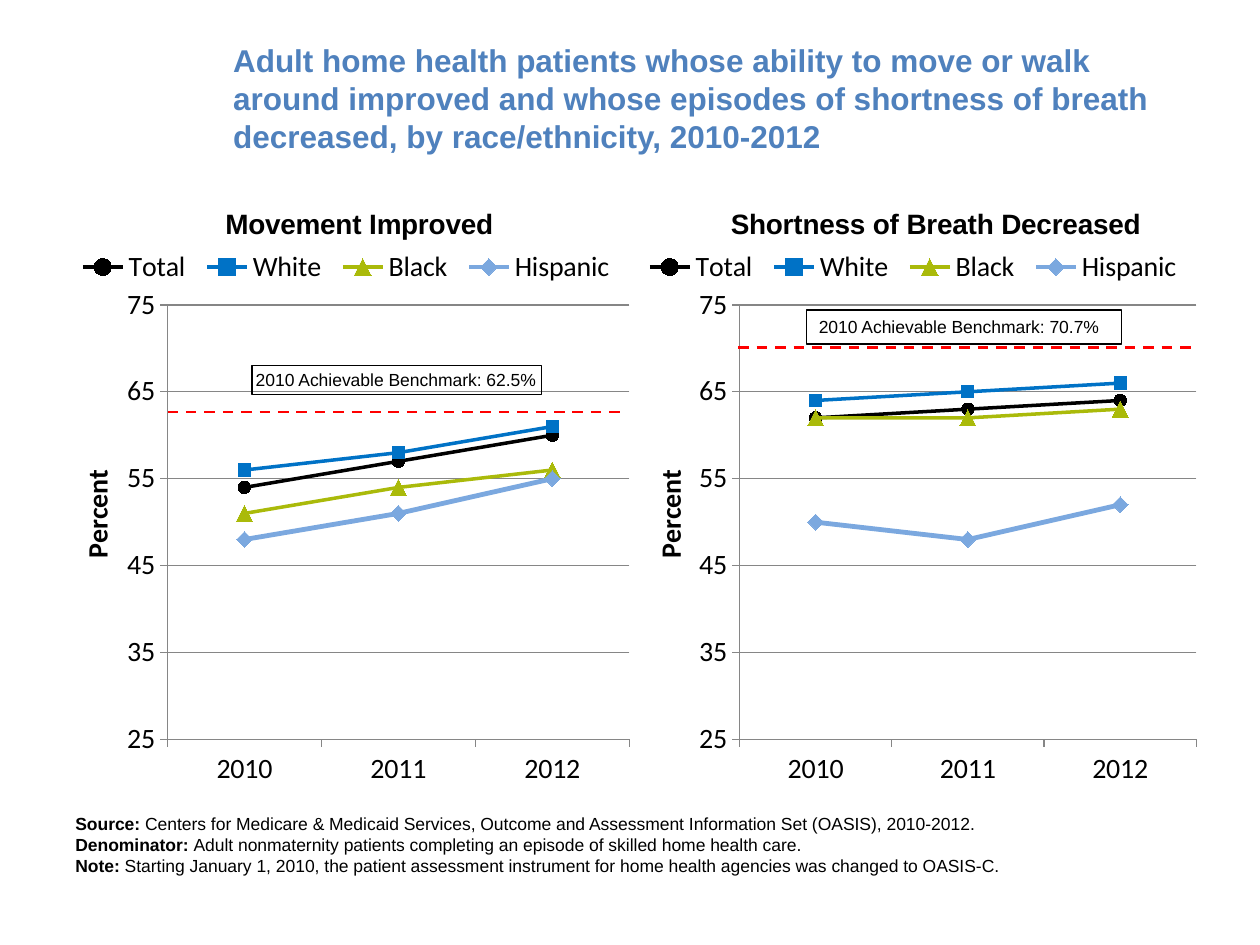
from lxml import etree
from pptx import Presentation
from pptx.chart import data as cd
from pptx.dml.color import RGBColor
from pptx.enum import chart as ch, dml, shapes, text
from pptx.oxml import ns, parse_xml
from pptx.util import Inches, Pt

BLACK = RGBColor(0x00, 0x00, 0x00)
TITLE_BLUE = RGBColor(0x4F, 0x81, 0xBD)
BLUE = RGBColor(0x00, 0x72, 0xC6)
GREEN = RGBColor(0xAA, 0xBA, 0x0A)
LIGHT_BLUE = RGBColor(0x7B, 0xA8, 0xDF)
RED = RGBColor(0xFF, 0x00, 0x00)
GRAY = RGBColor(0x86, 0x86, 0x86)

HEADING = ("Adult home health patients whose ability to move or walk around improved "
           "and whose episodes of shortness of breath decreased, by race/ethnicity, 2010-2012")
YEARS = ["2010", "2011", "2012"]
MARKER = ch.XL_MARKER_STYLE
GROUPS = [
    ("Total", BLACK, 2, MARKER.CIRCLE, 7),
    ("White", BLUE, 2, MARKER.SQUARE, 7),
    ("Black", GREEN, 2, MARKER.TRIANGLE, 9),
    ("Hispanic", LIGHT_BLUE, 2.75, MARKER.DIAMOND, 9),
]
PANELS = [
    {
        "title": "Shortness of Breath Decreased", "left": 5,
        "title_at": (0.76, 0), "percent_at": (0.13, 2.09), "plot_at": (0.87, 0.82, 3.63, 3.45),
        "percents": [(62, 63, 64), (64, 65, 66), (62, 62, 63), (50, 48, 52)],
        "benchmark": "2010 Achievable Benchmark: 70.7%",
        "label_at": (6.4, 2.46, 2.5, 0.27), "insets": (0.1, 0.05), "rule": (5.86, 2.76),
    },
    {
        "title": "Movement Improved", "left": 0.5,
        "title_at": (1.25, 0), "percent_at": (0.08, 2.09), "plot_at": (0.83, 0.82, 3.67, 3.45),
        "percents": [(54, 57, 60), (56, 58, 61), (51, 54, 56), (48, 51, 55)],
        "benchmark": "2010 Achievable Benchmark: 62.5%",
        "label_at": (2, 2.9, 2.3, 0.23), "insets": (0.03, 0.03), "rule": (1.33, 3.27),
    },
]
CHART_TOP, CHART_WIDTH, CHART_HEIGHT = 1.6, 4.5, 4.7
LEGEND_AT = (0.06, 0.36, 4.38, 0.32)
RULE_LENGTH = 3.6
NOTES = [
    ("Source: ", "Centers for Medicare & Medicaid Services, Outcome and Assessment "
                 "Information Set (OASIS), 2010-2012."),
    ("Denominator: ", "Adult nonmaternity patients completing an episode of skilled home health care."),
    ("Note: ", "Starting January 1, 2010, the patient assessment instrument for home health "
               "agencies was changed to OASIS-C."),
]


def style(font, size, name="Arial", color=BLACK, bold=False):
    font.size, font.name, font.bold = Pt(size), name, bold
    font.color.rgb = color


def place(element, position, index=1, inner=False):
    for old in element.findall(ns.qn("c:layout")):
        element.remove(old)
    target = '<c:layoutTarget val="inner"/>' if inner else ""
    modes = "".join(f'<c:{side}Mode val="edge"/>' for side in "xy")
    extents = (CHART_WIDTH, CHART_HEIGHT) * 2
    places = "".join(f'<c:{key} val="{length / extent:.4f}"/>'
                     for key, length, extent in zip("xywh", position, extents))
    element.insert(index, parse_xml(
        f'<c:layout {ns.nsdecls("c")}><c:manualLayout>{target}{modes}{places}'
        '</c:manualLayout></c:layout>'))


def add_panel(slide, panel):
    figures = cd.CategoryChartData(number_format="0")
    figures.categories = YEARS
    for group, percents in zip(GROUPS, panel["percents"]):
        figures.add_series(group[0], percents)
    area = map(Inches, (panel["left"], CHART_TOP, CHART_WIDTH, CHART_HEIGHT))
    chart = slide.shapes.add_chart(ch.XL_CHART_TYPE.LINE_MARKERS, *area, figures).chart
    style(chart.font, 10)

    heading = chart.chart_title.text_frame
    heading.text = panel["title"]
    style(heading.paragraphs[0].font, 16, bold=True)
    chart.chart_title.include_in_layout = False
    place(chart.chart_title._element, panel["title_at"])

    chart.has_legend = True
    chart.legend.position = ch.XL_LEGEND_POSITION.TOP
    chart.legend.include_in_layout = False
    style(chart.legend.font, 16, "Calibri")
    place(chart.legend._element, LEGEND_AT)

    percent_axis = chart.value_axis
    percent_axis.minimum_scale, percent_axis.maximum_scale = 25, 75
    percent_axis.major_unit = 10
    percent_axis.major_gridlines.format.line.color.rgb = GRAY
    percent_axis.major_gridlines.format.line.width = Pt(0.75)
    percent_axis.tick_labels.number_format = "0"
    percent_axis.tick_labels.number_format_is_linked = False
    percent_axis.axis_title.text_frame.text = "Percent"
    style(percent_axis.axis_title.text_frame.paragraphs[0].font, 16, "Calibri", bold=True)
    place(percent_axis.axis_title._element, panel["percent_at"])
    for axis in (percent_axis, chart.category_axis):
        axis.major_tick_mark = ch.XL_TICK_MARK.OUTSIDE
        axis.format.line.color.rgb = GRAY
        axis.format.line.width = Pt(0.75)
        style(axis.tick_labels.font, 16, "Calibri")

    chart.plots[0].vary_by_categories = False
    for series, (_, color, width, marker, size) in zip(chart.plots[0].series, GROUPS):
        series.smooth = False
        series.format.line.color.rgb = color
        series.format.line.width = Pt(width)
        series.marker.style, series.marker.size = marker, size
        series.marker.format.fill.solid()
        series.marker.format.fill.fore_color.rgb = color
        series.marker.format.line.color.rgb = color
    place(chart._chartSpace.chart.plotArea, panel["plot_at"], 0, inner=True)


def add_benchmark(slide, panel):
    left, top = panel["rule"]
    rule = slide.shapes.add_connector(
        shapes.MSO_CONNECTOR.STRAIGHT, Inches(left), Inches(top),
        Inches(left + RULE_LENGTH), Inches(top))
    rule.line.color.rgb = RED
    rule.line.width = Pt(1.5)
    rule.line.dash_style = dml.MSO_LINE.DASH
    etree.SubElement(rule._element.spPr, ns.qn("a:effectLst"))

    label = slide.shapes.add_shape(shapes.MSO_SHAPE.RECTANGLE, *map(Inches, panel["label_at"]))
    label.shadow.inherit = False
    label.fill.background()
    label.line.color.rgb = BLACK
    label.line.width = Pt(0.75)
    frame = label.text_frame
    frame.margin_left = frame.margin_right = Inches(panel["insets"][0])
    frame.margin_top = frame.margin_bottom = Inches(panel["insets"][1])
    frame.word_wrap = True
    frame.auto_size = text.MSO_AUTO_SIZE.SHAPE_TO_FIT_TEXT
    frame.text = panel["benchmark"]
    frame.paragraphs[0].alignment = text.PP_ALIGN.LEFT
    style(frame.paragraphs[0].font, 10)


def add_notes(slide):
    box = slide.shapes.add_textbox(Inches(0.5), Inches(6.4), Inches(9), Inches(0.61))
    frame = box.text_frame
    frame.word_wrap = True
    frame.auto_size = text.MSO_AUTO_SIZE.SHAPE_TO_FIT_TEXT
    for index, (lead, detail) in enumerate(NOTES):
        line = frame.add_paragraph() if index else frame.paragraphs[0]
        style(line.font, 10)
        lead_run = line.add_run()
        lead_run.text, lead_run.font.bold = lead, True
        line.add_run().text = detail


def main():
    deck = Presentation()
    deck.slide_width, deck.slide_height = Inches(10), Inches(7.5)
    slide = deck.slides.add_slide(deck.slide_layouts[5])

    title = slide.shapes.title
    title.left, title.top, title.width, title.height = map(Inches, (1.75, 0.3, 7.75, 0.95))
    title.text_frame.text = HEADING
    title.text_frame.vertical_anchor = text.MSO_ANCHOR.MIDDLE
    title.text_frame.paragraphs[0].alignment = text.PP_ALIGN.LEFT
    style(title.text_frame.paragraphs[0].font, 18, color=TITLE_BLUE, bold=True)

    for panel in PANELS:
        add_panel(slide, panel)
        add_benchmark(slide, panel)
    add_notes(slide)
    deck.save("out.pptx")


if __name__ == "__main__":
    main()
